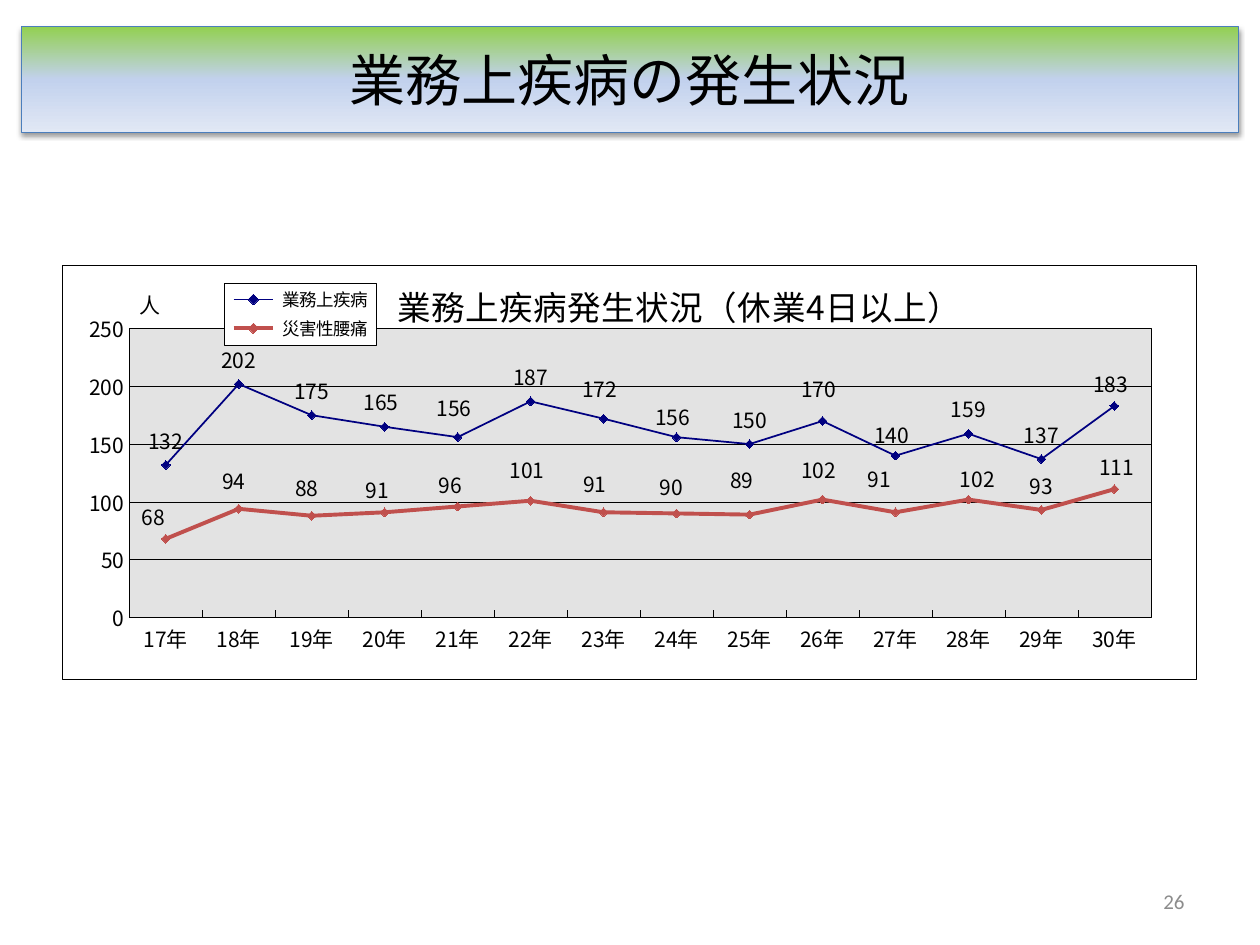
import copy

import pptx
import pptx.chart.data
import pptx.dml.color
import pptx.enum.chart
import pptx.enum.shapes
import pptx.enum.text
import pptx.oxml
import pptx.oxml.ns
import pptx.util
from pptx.util import Inches

NS = pptx.oxml.ns.nsdecls("a", "c")
qn = pptx.oxml.ns.qn
CHART_FONT = "Noto Sans CJK JP"
CHART_WIDTH, CHART_HEIGHT = 9.01, 3.3

YEARS = [f"{year}年" for year in range(17, 31)]
DISEASES = [132, 202, 175, 165, 156, 187, 172, 156, 150, 170, 140, 159, 137, 183]
BACK_PAIN = [68, 94, 88, 91, 96, 101, 91, 90, 89, 102, 91, 102, 93, 111]

# Label shifts from the spot above the point, in inches: {point: (right, down)}
DISEASE_SHIFTS = {3: (-0.03, 0), 4: (-0.03, -0.04), 6: (-0.03, -0.04), 7: (-0.03, 0.03),
                  9: (-0.03, -0.06), 10: (-0.03, 0.03), 13: (-0.03, 0.02)}
BACK_PAIN_SHIFTS = dict(enumerate([
    (-0.1, 0.02), (-0.04, -0.03), (-0.04, -0.03), (-0.06, 0.02), (-0.06, 0.02),
    (-0.03, -0.05), (-0.07, -0.03), (-0.04, -0.02), (-0.06, -0.08), (-0.03, -0.04),
    (-0.13, -0.07), (0.07, 0.03), (0, 0), (0.02, 0.02)]))


def rgb(color):
    return pptx.dml.color.RGBColor.from_string(color)


def style_font(font, size, color="000000", name=CHART_FONT):
    font.size = pptx.util.Pt(size)
    font.bold = False
    font.color.rgb = rgb(color)
    font.name = name


def style_line(line, color, width):
    line.color.rgb = rgb(color)
    line.width = pptx.util.Pt(width)


def write_text(shape, text, size, color, align):
    frame = shape.text_frame
    frame.word_wrap = True
    frame.vertical_anchor = pptx.enum.text.MSO_ANCHOR.MIDDLE
    paragraph = frame.paragraphs[0]
    paragraph.alignment = align
    run = paragraph.add_run()
    run.text = text
    style_font(run.font, size, color, "Calibri")


def add_banner(slide, text):
    banner = slide.shapes.add_shape(pptx.enum.shapes.MSO_SHAPE.RECTANGLE,
                                    Inches(0.17), Inches(0.21), Inches(9.66), Inches(0.84))
    banner.shadow.inherit = False
    style_line(banner.line, "4B7EBC", 0.75)
    # Three-stop gradient running downwards
    banner.fill.gradient()
    banner.fill.gradient_angle = 270
    first = banner.fill.gradient_stops[0]._gs
    first.addnext(copy.deepcopy(first))
    for stop, position, color in zip(banner.fill.gradient_stops, (0, 0.5, 1),
                                     ("92D050", "C2D1ED", "E1E8F5")):
        stop.position = position
        stop.color.rgb = rgb(color)
    # Soft shadow below
    effects = banner._element.spPr.find(qn("a:effectLst"))
    effects.append(pptx.oxml.parse_xml(
        f'<a:outerShdw {NS} blurRad="39370" dist="20320" dir="5400000" rotWithShape="0">'
        '<a:srgbClr val="000000"><a:alpha val="38000"/></a:srgbClr></a:outerShdw>'))
    write_text(banner, text, 32, "000000", pptx.enum.text.PP_ALIGN.CENTER)


def add_page_number(slide, text):
    box = slide.shapes.add_textbox(Inches(7.17), Inches(6.95), Inches(2.33), Inches(0.4))
    write_text(box, text, 12, "8C8C8C", pptx.enum.text.PP_ALIGN.RIGHT)


def layout(x, y, width=None, height=None, inner=False, edge=True):
    """Manual layout in fractions of the chart; edge=False makes x, y shifts."""
    parts = [("layoutTarget", "inner")] if inner else []
    if edge:
        parts += [("xMode", "edge"), ("yMode", "edge")]
    parts += [("x", x), ("y", y)]
    if width is not None:
        parts += [("w", width), ("h", height)]
    body = "".join(f'<c:{tag} val="{value}"/>' for tag, value in parts)
    return pptx.oxml.parse_xml(
        f"<c:layout {NS}><c:manualLayout>{body}</c:manualLayout></c:layout>")


def place(element, new_layout, after=None):
    """Put a layout in a chart part, first or after the named child."""
    for old in element.findall(qn("c:layout")):
        element.remove(old)
    if after is None:
        element.insert(0, new_layout)
    else:
        element.find(qn(after)).addnext(new_layout)


def box_style(fill, width):
    return pptx.oxml.parse_xml(
        f'<c:spPr {NS}><a:solidFill><a:srgbClr val="{fill}"/></a:solidFill>'
        f'<a:ln w="{pptx.util.Pt(width)}"><a:solidFill><a:srgbClr val="000000"/>'
        '</a:solidFill></a:ln></c:spPr>')


def add_title(title, text, size, x, y):
    run = title.text_frame.paragraphs[0].add_run()
    run.text = text
    style_font(run.font, size)
    place(title._element, layout(x, y), "c:tx")


def style_axis(axis):
    axis.major_tick_mark = pptx.enum.chart.XL_TICK_MARK.INSIDE
    axis.minor_tick_mark = pptx.enum.chart.XL_TICK_MARK.NONE
    style_font(axis.tick_labels.font, 12)
    style_line(axis.format.line, "000000", 0.25)


def hide_leader_lines(labels):
    element = labels._element
    for old in element.findall(qn("c:showLeaderLines")):
        element.remove(old)
    element.append(pptx.oxml.parse_xml(f'<c:showLeaderLines {NS} val="0"/>'))
    element.append(pptx.oxml.parse_xml(
        f'<c:extLst {NS}><c:ext uri="{{CE6537A1-D6FC-4f65-9D91-7224C49458BB}}" '
        'xmlns:c15="http://schemas.microsoft.com/office/drawing/2012/chart">'
        '<c15:showLeaderLines val="0"/></c:ext></c:extLst>'))


def style_series(series, color, width, shifts):
    series.smooth = False
    style_line(series.format.line, color, width)
    marker = series.marker
    marker.style = pptx.enum.chart.XL_MARKER_STYLE.DIAMOND
    marker.size = 5
    marker.format.fill.solid()
    marker.format.fill.fore_color.rgb = rgb(color)
    style_line(marker.format.line, color, 0.75)

    above = pptx.enum.chart.XL_LABEL_POSITION.ABOVE
    labels = series.data_labels
    labels.show_value = True
    labels.position = above
    style_font(labels.font, 12)
    for index, (right, down) in shifts.items():
        label = series.points[index].data_label
        label.position = above
        style_font(label.font, 12)
        for element in labels._element.findall(qn("c:dLbl")):
            if element.find(qn("c:idx")).get("val") == str(index):
                shift = layout(round(right / CHART_WIDTH, 4),
                               round(down / CHART_HEIGHT, 4), edge=False)
                place(element, shift, "c:idx")
    hide_leader_lines(labels)


def add_disease_chart(slide):
    data = pptx.chart.data.CategoryChartData()
    data.categories = YEARS
    data.add_series(" 業務上疾病", DISEASES)
    data.add_series(" 災害性腰痛", BACK_PAIN)
    chart = slide.shapes.add_chart(
        pptx.enum.chart.XL_CHART_TYPE.LINE_MARKERS, Inches(0.49), Inches(2.1),
        Inches(CHART_WIDTH), Inches(CHART_HEIGHT), data).chart
    style_font(chart.font, 12)
    plot = chart.plots[0]
    plot.vary_by_categories = False

    # Backgrounds and plot position
    space = chart._chartSpace
    space.find(qn("c:chart")).addnext(box_style("FFFFFF", 0.75))
    plot_area = space.find(qn("c:chart")).find(qn("c:plotArea"))
    place(plot_area, layout(0.059, 0.153, 0.901, 0.697, inner=True))
    plot_area.append(box_style("E3E3E3", 0.25))

    # Axes
    years, people = chart.category_axis, chart.value_axis
    style_axis(years)
    style_axis(people)
    people.minimum_scale, people.maximum_scale, people.major_unit = 0, 250, 50
    style_line(people.major_gridlines.format.line, "000000", 0.25)

    # Titles
    chart.has_title = True
    add_title(chart.chart_title, "業務上疾病発生状況（休業4日以上）", 19.2, 0.29, 0.015)
    add_title(people.axis_title, "人", 12, 0.065, 0.04)
    direction = people.axis_title.text_frame._txBody.find(qn("a:bodyPr"))
    direction.set("rot", "0")
    direction.set("vert", "horz")

    # Legend
    chart.has_legend = True
    legend = chart.legend
    legend.position = pptx.enum.chart.XL_LEGEND_POSITION.RIGHT
    legend.include_in_layout = False
    style_font(legend.font, 10)
    place(legend._element, layout(0.143, 0.043, 0.134, 0.149), "c:legendPos")
    legend._element.find(qn("c:overlay")).addnext(box_style("FFFFFF", 0.25))

    # Lines and labels
    diseases, back_pain = plot.series
    style_series(diseases, "000080", 1, DISEASE_SHIFTS)
    style_series(back_pain, "C0504D", 2.25, BACK_PAIN_SHIFTS)


def main():
    deck = pptx.Presentation()
    deck.slide_width, deck.slide_height = Inches(10), Inches(7.5)
    slide = deck.slides.add_slide(deck.slide_layouts[6])
    add_page_number(slide, "26")
    add_banner(slide, "業務上疾病の発生状況")
    add_disease_chart(slide)
    deck.save("out.pptx")


if __name__ == "__main__":
    main()
